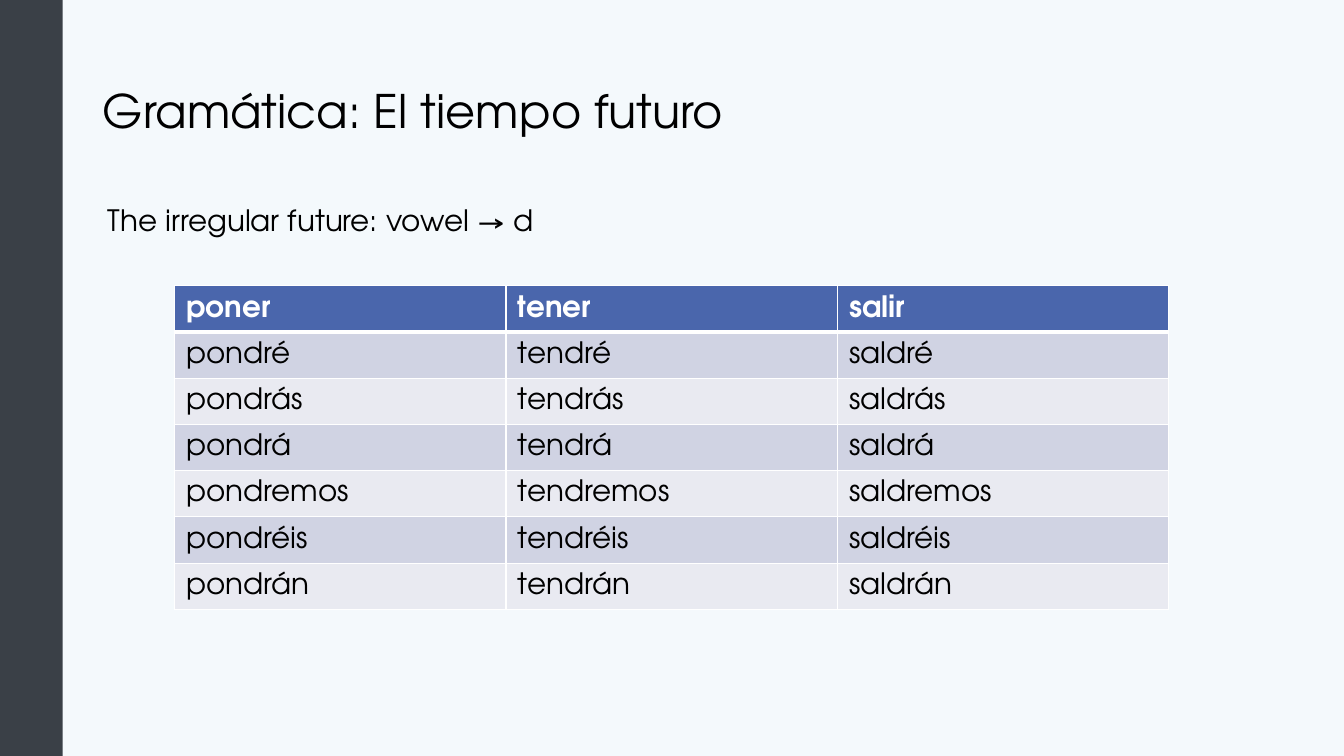
from dataclasses import dataclass

from lxml import etree
from pptx import Presentation
from pptx import util as u
from pptx.dml.color import RGBColor
from pptx.enum import shapes, text
from pptx.oxml.ns import qn

FONT = "TeX Gyre Adventor"
BLACK, WHITE = "000000", "FFFFFF"
BLUE, BANDS = "4A66AC", ("D0D3E3", "E9EAF1")
VERBS = {"poner": "pondr", "tener": "tendr", "salir": "saldr"}
ENDINGS = ("é", "ás", "á", "emos", "éis", "án")


@dataclass
class Label:
    words: str
    top: float
    height: float
    size: float
    anchor: text.MSO_ANCHOR
    before: float = 0
    margin: float = 0
    indent: float = 0


LABELS = (
    Label("Gramática: El tiempo futuro", 1.02, 3.68, 33, text.MSO_ANCHOR.MIDDLE),
    Label("The irregular future: vowel → d", 5.08, 12.09, 21,
          text.MSO_ANCHOR.TOP, before=7.5, margin=0.97, indent=-0.84),
)


def color(code: str) -> RGBColor:
    return RGBColor.from_string(code)


def style(para, size: float, code: str, bold: bool = False) -> None:
    font = para.font
    font.name, font.size, font.bold = FONT, u.Pt(size), bold
    font.color.rgb = color(code)


def draw_label(slide, label: Label) -> None:
    box = slide.shapes.add_textbox(u.Cm(2.34), u.Cm(label.top), u.Cm(29.2), u.Cm(label.height))
    frame = box.text_frame
    frame.word_wrap = True
    frame.vertical_anchor = label.anchor
    para = frame.paragraphs[0]
    para.text = label.words
    para.line_spacing = 0.9
    para.space_before = u.Pt(label.before)
    props = para._p.get_or_add_pPr()
    props.set("marL", str(u.Cm(label.margin)))
    props.set("indent", str(u.Cm(label.indent)))
    style(para, label.size, BLACK)


def draw_edges(cell, top: float, bottom: float) -> None:
    props = cell._tc.get_or_add_tcPr()
    for side, width in (("L", 1), ("R", 1), ("T", top), ("B", bottom)):
        line = etree.SubElement(props, qn(f"a:ln{side}"), w=str(u.Pt(width)))
        fill = etree.SubElement(line, qn("a:solidFill"))
        etree.SubElement(fill, qn("a:srgbClr"), val=WHITE)


def draw_cell(cell, words: str, row: int) -> None:
    head = row == 0
    draw_edges(cell, 3 if row == 1 else 1, 3 if head else 1)
    cell.fill.solid()
    cell.fill.fore_color.rgb = color(BLUE if head else BANDS[(row - 1) % 2])
    cell.margin_left = cell.margin_right = u.Cm(0.3)
    cell.margin_top = cell.margin_bottom = u.Cm(0.05)
    cell.vertical_anchor = text.MSO_ANCHOR.MIDDLE
    para = cell.text_frame.paragraphs[0]
    para.text = words
    style(para, 21, WHITE if head else BLACK, head)


def draw_table(slide) -> None:
    rows = [list(VERBS)] + [[stem + end for stem in VERBS.values()] for end in ENDINGS]
    table = slide.shapes.add_table(
        len(rows), len(VERBS), u.Cm(4.4), u.Cm(7.2), u.Cm(25.05), u.Cm(1.165 * len(rows))).table
    table.first_row = table.horz_banding = False
    for r, row in enumerate(rows):
        for c, words in enumerate(row):
            draw_cell(table.cell(r, c), words, r)


def main() -> None:
    deck = Presentation()
    deck.slide_width, deck.slide_height = u.Cm(33.87), u.Cm(19.05)
    slide = deck.slides.add_slide(deck.slide_layouts[6])

    # Background and side bar
    back = slide.background.fill
    back.solid()
    back.fore_color.rgb = color("F4F9FC")
    bar = slide.shapes.add_shape(
        shapes.MSO_SHAPE.RECTANGLE, 0, 0, u.Cm(1.58), deck.slide_height)
    bar.shadow.inherit = False
    bar.fill.solid()
    bar.fill.fore_color.rgb = color("3A4047")
    bar.line.fill.background()

    # Title, rule and verb table
    for label in LABELS:
        draw_label(slide, label)
    draw_table(slide)
    deck.save("out.pptx")


if __name__ == "__main__":
    main()
